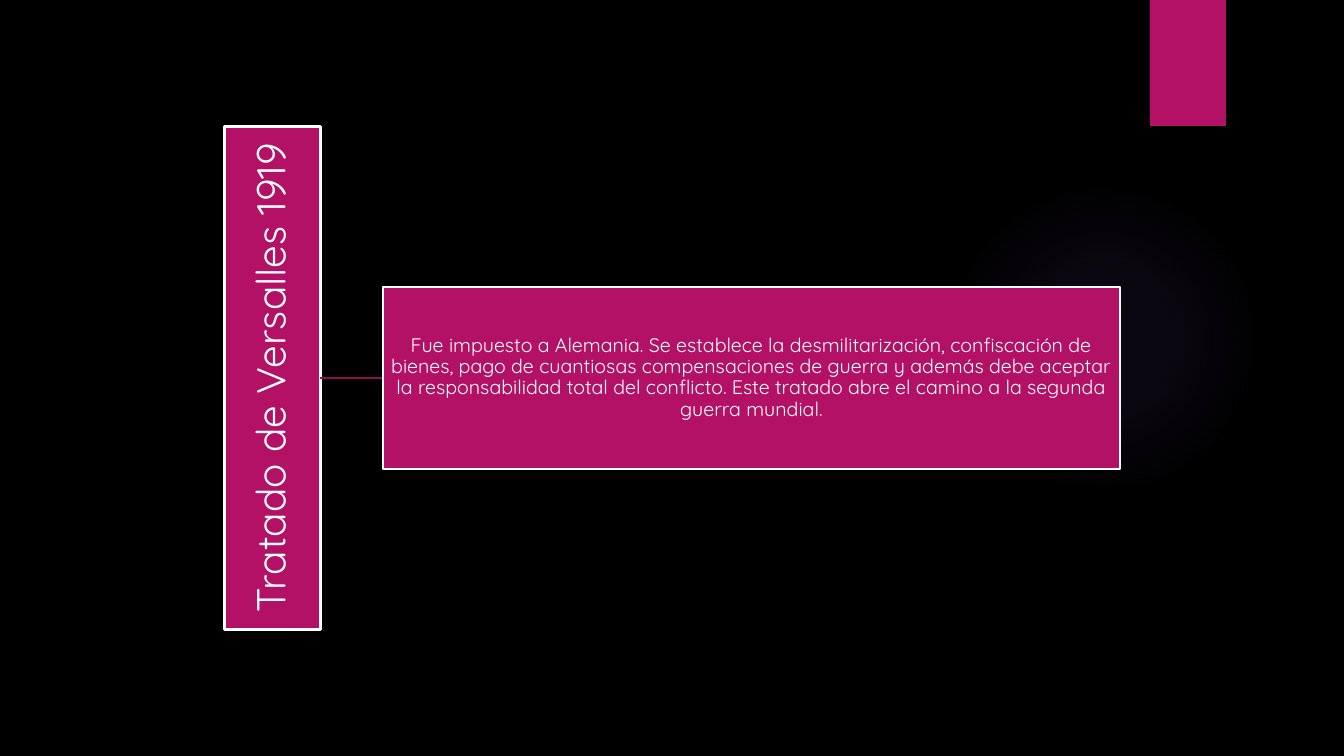
"""Build a slide about the Treaty of Versailles."""
from lxml import etree
from pptx import Presentation
from pptx.dml.color import RGBColor
from pptx.enum.shapes import MSO_CONNECTOR, MSO_SHAPE
from pptx.enum.text import MSO_ANCHOR, MSO_AUTO_SIZE, PP_ALIGN
from pptx.oxml import parse_xml
from pptx.oxml.ns import nsdecls, qn
from pptx.util import Emu, Pt

EMU_PER_PX = 914400 / 100.8
COLORS = {"back": "000000", "node": "B31166", "link": "8F0E52",
          "text": "FFFFFF", "glow": "9B6BF2"}
GLOW_STOPS = [(0, 7), (36, 6), (69, 0)]
FONT = "Quicksand"
TITLE_ONLY = 5
RECTANGLE, OVAL = MSO_SHAPE.RECTANGLE, MSO_SHAPE.OVAL
STRAIGHT = MSO_CONNECTOR.STRAIGHT
CENTER, MIDDLE = PP_ALIGN.CENTER, MSO_ANCHOR.MIDDLE
NO_AUTOFIT = MSO_AUTO_SIZE.NONE

TITLE = "Tratado de Versalles 1919"
SUMMARY = ("Fue impuesto a Alemania. Se establece la desmilitarización, "
           "confiscación de bienes, pago de cuantiosas compensaciones de guerra "
           "y además debe aceptar la responsabilidad total del conflicto. Este "
           "tratado abre el camino a la segunda guerra mundial.")


def px(length):
    """Turn pixels into EMU."""
    return Emu(round(length * EMU_PER_PX))


def color(name):
    """Look up a named colour."""
    return RGBColor.from_string(COLORS[name])


def set_all(target, values):
    """Set each attribute of the target from a dict."""
    for name, value in values.items():
        setattr(target, name, value)


def fill_solid(fill, name):
    """Give a fill one named colour."""
    fill.solid()
    fill.fore_color.rgb = color(name)


def add_plain(page, preset, left, top, width, height):
    """Add a preset shape without line or shadow."""
    shape = page.shapes.add_shape(preset, px(left), px(top), px(width), px(height))
    shape.shadow.inherit = False
    shape.line.fill.background()
    fill_solid(shape.fill, "node")
    return shape


def add_glow(page, left, top, size):
    """Add a faint round glow that fades outwards."""
    glow = add_plain(page, OVAL, left, top, size, size)
    stops = "".join(
        f'<a:gs pos="{pos * 1000}"><a:srgbClr val="{COLORS["glow"]}">'
        f'<a:alpha val="{alpha * 1000}"/></a:srgbClr></a:gs>'
        for pos, alpha in GLOW_STOPS)
    gradient = parse_xml(
        f'<a:gradFill {nsdecls("a")}><a:gsLst>{stops}</a:gsLst>'
        '<a:path path="circle"><a:fillToRect l="50000" t="50000" r="50000" '
        'b="50000"/></a:path></a:gradFill>')
    solid = glow.element.spPr.find(qn("a:solidFill"))
    solid.getparent().replace(solid, gradient)


def add_link(page, left, right, middle):
    """Add the level line that joins the two nodes."""
    link = page.shapes.add_connector(STRAIGHT, px(left), px(middle), px(right), px(middle))
    link.line.width = Pt(1.5)
    link.line.color.rgb = color("link")
    etree.SubElement(link.element.spPr, qn("a:effectLst"))


def style_node(node, text, size, margin):
    """Format a node and write its centred text."""
    fill_solid(node.fill, "node")
    node.line.width = Pt(1.5)
    node.line.color.rgb = color("text")
    frame = node.text_frame
    frame.text = text
    inset = px(margin)
    set_all(frame, {"word_wrap": True, "auto_size": NO_AUTOFIT,
                    "vertical_anchor": MIDDLE, "margin_left": inset,
                    "margin_right": inset, "margin_top": inset,
                    "margin_bottom": inset})
    para = frame.paragraphs[0]
    set_all(para, {"alignment": CENTER, "line_spacing": 0.9})
    font = para.runs[0].font
    set_all(font, {"name": FONT, "size": Pt(size), "bold": False})
    font.color.rgb = color("text")


def main():
    """Build and save the deck."""
    deck = Presentation()
    set_all(deck, {"slide_width": px(1344), "slide_height": px(756)})
    page = deck.slides.add_slide(deck.slide_layouts[TITLE_ONLY])
    fill_solid(page.background.fill, "back")
    add_glow(page, 949, 184, 310)
    add_plain(page, RECTANGLE, 1150, 0, 76, 126)
    add_link(page, 320, 383, 378)
    title = page.shapes.title
    set_all(title, {"left": px(21), "top": px(330), "width": px(503),
                    "height": px(96), "rotation": 270})
    style_node(title, TITLE, 29, 2)
    summary = add_plain(page, RECTANGLE, 383, 287, 737, 182)
    style_node(summary, SUMMARY, 14, 1)
    deck.save("out.pptx")


if __name__ == "__main__":
    main()
